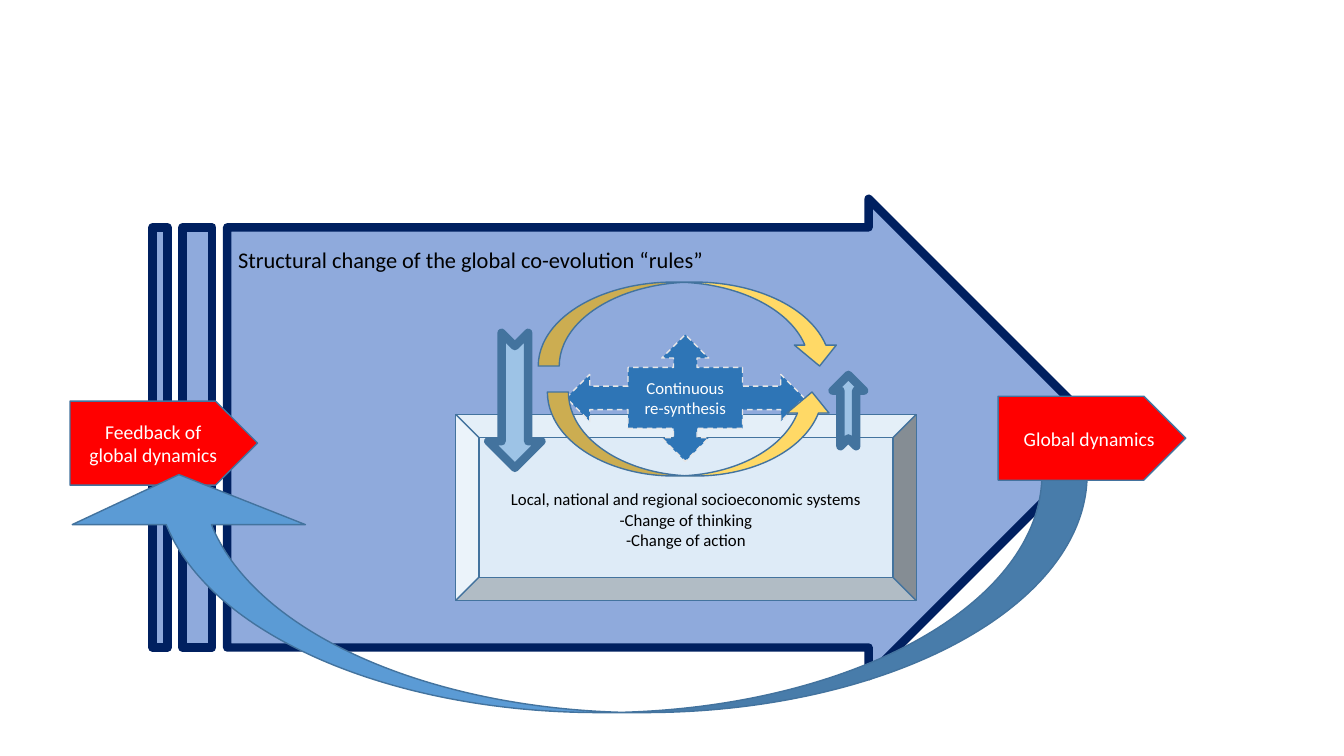
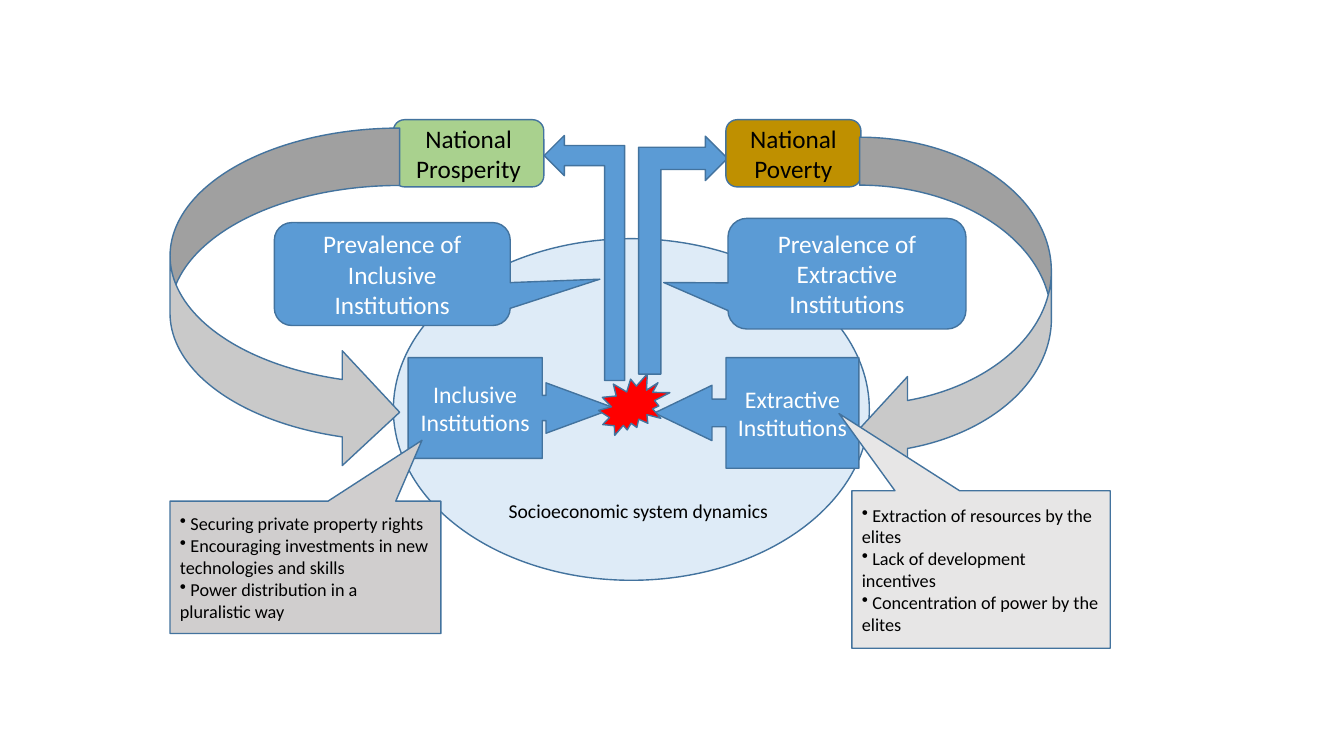
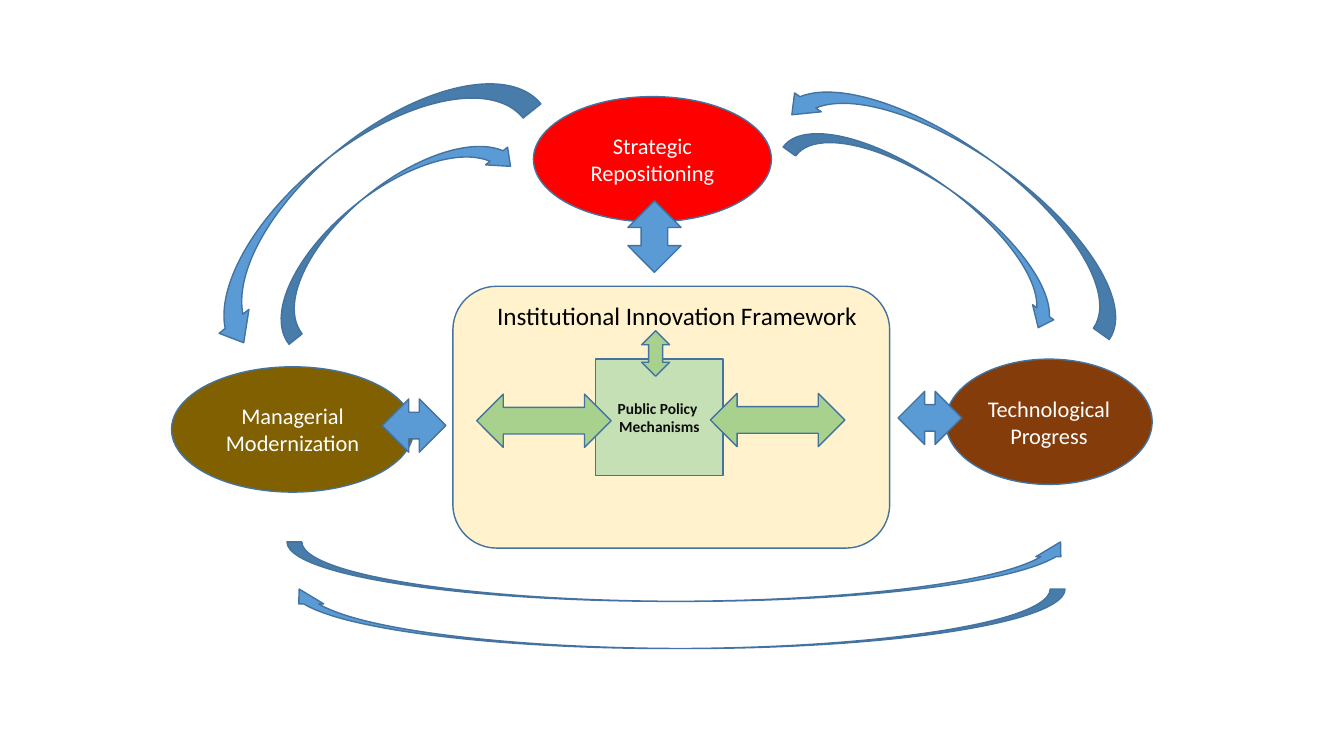
from dataclasses import dataclass

from lxml.etree import SubElement
from pptx import Presentation
from pptx.dml.color import RGBColor
from pptx.enum.dml import MSO_LINE as Dash
from pptx.enum.shapes import MSO_SHAPE as Kind
from pptx.enum.text import MSO_ANCHOR as Anchor, MSO_AUTO_SIZE as AutoSize, PP_ALIGN as Align
from pptx.oxml.ns import qn
from pptx.util import Pt


@dataclass(frozen=True)
class Theme:
    font: str = "Calibri"
    # Colours
    black: str = "000000"
    ink: str = "0D0D0D"
    white: str = "FFFFFF"
    outline: str = "43739E"
    navy: str = "002060"
    blue: str = "5B9BD5"
    dark_blue: str = "2E75B6"
    light_blue: str = "9DC3E6"
    pale_blue: str = "DEEBF7"
    periwinkle: str = "8FAADC"
    red: str = "FF0000"
    yellow: str = "FFD966"
    cream: str = "FFF2CC"
    green: str = "A9D18E"
    pale_green: str = "C5E0B4"
    gold: str = "BF9000"
    olive: str = "806000"
    brown: str = "843C0B"
    silver: str = "C9C9C9"
    warm_gray: str = "D0CECE"
    light_gray: str = "E7E6E6"
    # Type sizes and line widths
    label: int = 18
    box: int = 17
    node: int = 16
    body: int = 14
    bullet: int = 13
    small: int = 12
    tiny: int = 11
    thin: int = 1
    thick: int = 6


theme = Theme()


def write_text(shape, lines, size, color, align=Align.CENTER, bold=None, bullet=None, **frame_format):
    for name, value in frame_format.items():
        setattr(shape.text_frame, name, value)
    shape.text_frame.text = "\n".join(lines)
    font_format = {"name": theme.font, "size": Pt(size), "bold": bold}
    for paragraph in shape.text_frame.paragraphs:
        paragraph.alignment = align
        for run in paragraph.runs:
            for name, value in font_format.items():
                setattr(run.font, name, value)
            run.font.color.rgb = RGBColor.from_string(color)
        if bullet:
            properties = paragraph._p.get_or_add_pPr()
            properties.set("marL", "0")
            properties.set("indent", "0")
            SubElement(properties, qn("a:buChar")).set("char", bullet)


def draw(slide, kind, box, fill, line=theme.outline, width=theme.thin, dash=None,
         rotation=0, flip=None, adjust=()):
    shape = slide.shapes.add_shape(kind, *map(Pt, box))
    shape.shadow.inherit = False
    shape.rotation = rotation
    shape.fill.solid()
    shape.fill.fore_color.rgb = RGBColor.from_string(fill)
    shape.line.color.rgb = RGBColor.from_string(line)
    for name, value in {"width": Pt(width), "dash_style": dash}.items():
        setattr(shape.line, name, value)
    for index, value in enumerate(adjust):
        shape.adjustments[index] = value
    if flip:
        shape.element.spPr.get_or_add_xfrm().set(flip, "1")
    return shape


presentation = Presentation()
presentation.slide_width, presentation.slide_height = Pt(960), Pt(540)
blank = presentation.slide_layouts[6]
caption_format = {"word_wrap": False, "auto_size": AutoSize.SHAPE_TO_FIT_TEXT}

# Slide 1: global dynamics
slide = presentation.slides.add_slide(blank)
draw(slide, Kind.STRIPED_RIGHT_ARROW, (109, 142, 682, 341), theme.periwinkle,
     line=theme.navy, width=theme.thick, adjust=(0.88, 0.5))
caption = slide.shapes.add_textbox(Pt(163), Pt(172), Pt(396), Pt(26.5))
write_text(caption, ["Structural change of the global co-evolution “rules”"], theme.node, theme.black,
           Align.LEFT, word_wrap=True, auto_size=AutoSize.SHAPE_TO_FIT_TEXT)
feedback = draw(slide, Kind.PENTAGON, (50, 286.5, 134, 60), theme.red)
write_text(feedback, ["Feedback of global dynamics"], theme.body, theme.white)

# Local systems, with the text set below the middle
systems = draw(slide, Kind.BEVEL, (325.5, 296, 329, 133), theme.pale_blue)
write_text(systems, ["Local, national and regional socioeconomic systems", "-Change of thinking",
                     "-Change of action"], theme.small, theme.black, margin_top=Pt(20.6))
for box, rotation in (((319.5, 267, 96.5, 38), 90), ((580.5, 282, 51, 22.5), 270)):
    draw(slide, Kind.NOTCHED_RIGHT_ARROW, box, theme.light_blue, width=theme.thick, rotation=rotation)

# Cycle of re-synthesis
synthesis = draw(slide, Kind.QUAD_ARROW_CALLOUT, (404.5, 239, 170, 90.5), theme.dark_blue,
                 line=theme.light_gray, dash=Dash.DASH)
write_text(synthesis, ["Continuous", "re-synthesis"], theme.small, theme.white)
for box, flip in (((391, 280, 204, 60), None), ((384.5, 201.5, 216, 60), "flipV")):
    draw(slide, Kind.CURVED_UP_ARROW, box, theme.yellow, flip=flip)

# Feedback loop
draw(slide, Kind.CURVED_DOWN_ARROW, (44.5, 339, 732, 170), theme.blue, rotation=180,
     adjust=(0.19, 0.98, 0.21))
dynamics = draw(slide, Kind.PENTAGON, (713, 283, 134, 60), theme.red)
write_text(dynamics, ["Global dynamics"], theme.body, theme.white, Align.RIGHT)

# Slide 2: inclusive and extractive institutions
slide = presentation.slides.add_slide(blank)
draw(slide, Kind.OVAL, (281, 170.5, 340, 244), theme.pale_blue)
caption = slide.shapes.add_textbox(Pt(355.5), Pt(353), Pt(201), Pt(24.5))
write_text(caption, ["Socioeconomic system dynamics"], theme.body, theme.black, **caption_format)

# Clash of institutions
for kind, box, adjust, text in (
    (Kind.RIGHT_ARROW_CALLOUT, (291.5, 255.5, 147.5, 72), (0.25, 0.25, 0.68, 0.65), "Inclusive Institutions"),
    (Kind.LEFT_ARROW_CALLOUT, (467.5, 255.5, 146, 79), (0.25, 0.25, 0.52, 0.65), "Extractive Institutions"),
):
    institutions = draw(slide, kind, box, theme.blue, adjust=adjust)
    write_text(institutions, [text], theme.box, theme.white)
draw(slide, Kind.EXPLOSION2, (427.5, 267, 51, 44), theme.red)
for box, rotation, flip in (((330, 155.5, 175, 57.5), 270, None), ((403, 150.5, 170, 63.5), 90, "flipH")):
    draw(slide, Kind.BENT_UP_ARROW, box, theme.blue, rotation=rotation, flip=flip)

# Prevalence callouts and national outcomes
callout, outcome = Kind.ROUNDED_RECTANGULAR_CALLOUT, Kind.FLOWCHART_ALTERNATE_PROCESS
for kind, box, fill, color, adjust, text in (
    (callout, (196, 159, 168.5, 73.5), theme.blue, theme.white, (0.88, 0.05, 0.17),
     "Prevalence of Inclusive Institutions"),
    (callout, (520, 156, 170, 79), theme.blue, theme.white, (-0.77, 0.08, 0.17),
     "Prevalence of Extractive Institutions"),
    (outcome, (281, 85.5, 107.5, 48), theme.green, theme.black, (), "National Prosperity"),
    (outcome, (518.5, 85.5, 96.5, 48), theme.gold, theme.black, (), "National Poverty"),
):
    label = draw(slide, kind, box, fill, adjust=adjust)
    write_text(label, [text], theme.label, color)

# Feedback from outcomes to institutions
for box, flip in (((121.5, 91.5, 164, 244), None), ((614, 98, 137, 242.5), "flipH")):
    draw(slide, Kind.CURVED_RIGHT_ARROW, box, theme.silver, flip=flip)

# Features of each kind of institution
for box, fill, adjust, lines in (
    ((608.5, 350.5, 184.5, 112.5), theme.light_gray, (-0.55, -0.99),
     [" Extraction of resources by the elites", " Lack of development incentives",
      " Concentration of power by the elites"]),
    ((121.5, 358, 193.5, 94.5), theme.warm_gray, (0.43, -0.96),
     [" Securing private property rights", " Encouraging investments in new technologies and skills",
      " Power distribution in a pluralistic way"]),
):
    features = draw(slide, Kind.RECTANGULAR_CALLOUT, box, fill, adjust=adjust)
    write_text(features, lines, theme.bullet, theme.black, Align.LEFT, bullet="•")

# Slide 3: institutional innovation framework
slide = presentation.slides.add_slide(blank)
draw(slide, Kind.ROUNDED_RECTANGLE, (323.5, 204.5, 312, 187), theme.cream)
policy = draw(slide, Kind.RECTANGLE, (425.5, 256.5, 91, 83), theme.pale_green)
write_text(policy, ["Public Policy \vMechanisms"], theme.tiny, theme.ink, bold=True,
           vertical_anchor=Anchor.MIDDLE)

# Three poles
for box, fill, text in (
    ((122.5, 262, 173, 89.5), theme.olive, "Managerial Modernization"),
    ((381, 69, 170, 89.5), theme.red, "Strategic Repositioning"),
    ((675.5, 256.5, 147.5, 89.5), theme.brown, "Technological Progress"),
):
    pole = draw(slide, Kind.OVAL, box, fill)
    write_text(pole, [text], theme.node, theme.white)

# Curved arrows between the poles, inner and outer
for box, rotation, flip in (
    ((645, 38, 44, 232.5), 305.3, None),
    ((250.5, 54, 48, 213), 231.2, None),
    ((461.5, 164, 42.5, 556), 90, None),
    ((464.5, 127.5, 42.5, 561.5), 90, "flipV"),
    ((662.5, -8.5, 55.5, 289.5), 305.3, "flipV"),
    ((222, -4.5, 65, 286), 231.2, "flipV"),
):
    draw(slide, Kind.CURVED_LEFT_ARROW, box, theme.blue, rotation=rotation, flip=flip,
         adjust=(0.25, 0.42, 0.25))

# Arrows between the poles and the framework
draw(slide, Kind.UP_DOWN_ARROW, (448.5, 143.5, 38, 51), theme.blue)
for left, top in ((273, 285), (641.5, 279.5)):
    draw(slide, Kind.LEFT_RIGHT_ARROW, (left, top, 45.5, 38), theme.blue)

# Framework title and the arrows inside it
caption = slide.shapes.add_textbox(Pt(348), Pt(211), Pt(274.5), Pt(29))
write_text(caption, ["Institutional Innovation Framework"], theme.label, theme.black, Align.LEFT,
           **caption_format)
for box, rotation in (((452, 242.5, 32.5, 20), 90), ((340.5, 281.5, 96, 38), 0), ((507.5, 281, 96, 38), 0)):
    draw(slide, Kind.LEFT_RIGHT_ARROW, box, theme.green, rotation=rotation)

presentation.save("out.pptx")
